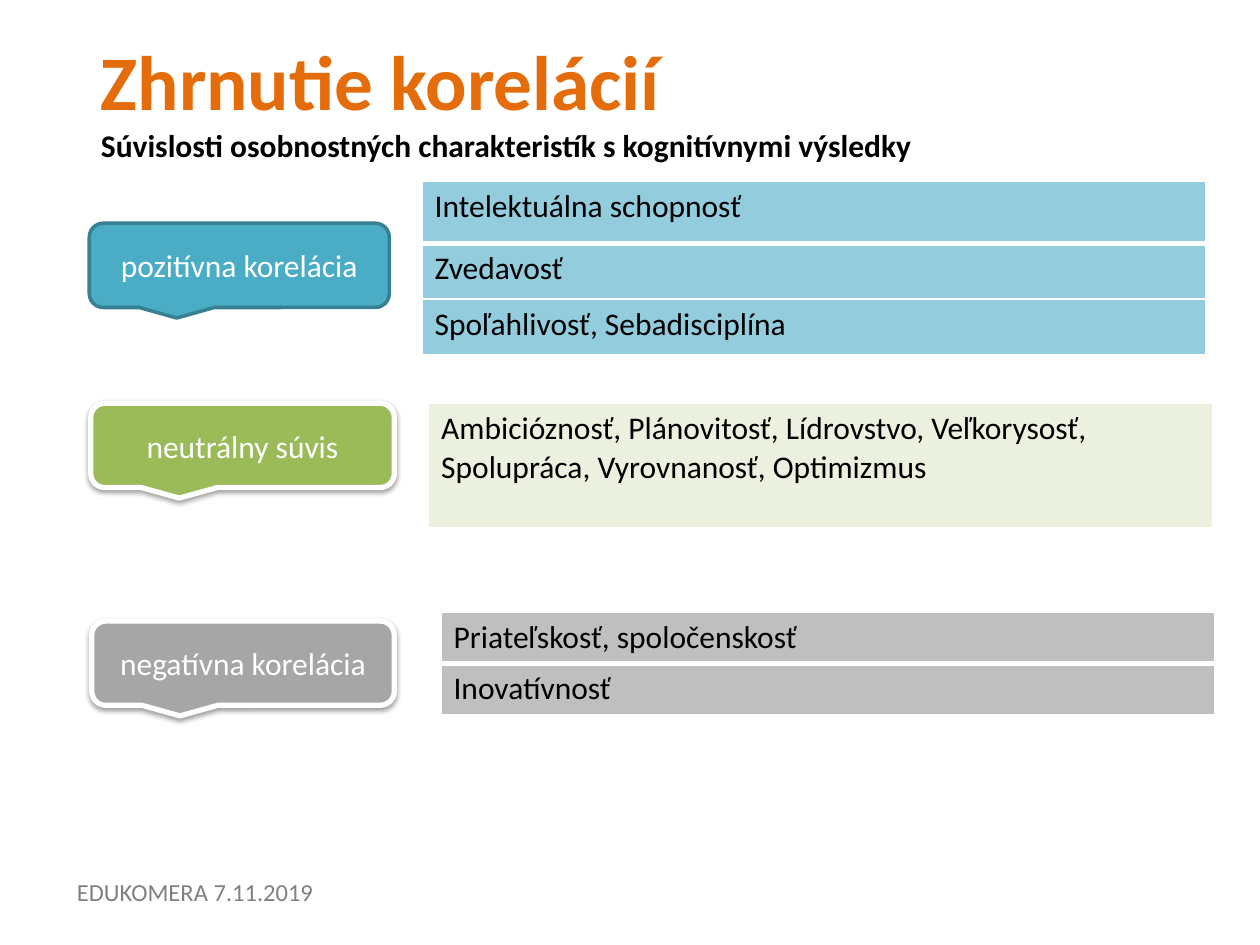
import pptx
import pptx.dml.color
import pptx.enum.shapes
import pptx.enum.text
import pptx.oxml
import pptx.oxml.ns
import pptx.util
from pptx.util import Cm

FONT = "Calibri"
ALIGN = pptx.enum.text.PP_ALIGN
ANCHOR = pptx.enum.text.MSO_ANCHOR
NAMESPACE = pptx.oxml.ns.nsdecls("a")


def rgb(color):
    """Turn a hex string into a colour."""
    return pptx.dml.color.RGBColor.from_string(color)


def add_run(paragraph, text, size=18, color="000000", bold=False):
    """Append one formatted run to a paragraph."""
    run = paragraph.add_run()
    run.text = text
    run.font.name = FONT
    run.font.size = pptx.util.Pt(size)
    run.font.bold = bold
    run.font.color.rgb = rgb(color)


def fill_title(slide):
    """Place the title and its subtitle line."""
    title = slide.shapes.title
    title.left, title.top, title.width, title.height = Cm(1.78), Cm(0.91), Cm(22.73), Cm(2.16)
    frame = title.text_frame
    frame.auto_size = pptx.enum.text.MSO_AUTO_SIZE.NONE
    frame.word_wrap = True
    frame.vertical_anchor = ANCHOR.MIDDLE
    paragraph = frame.paragraphs[0]
    paragraph.alignment = ALIGN.LEFT
    add_run(paragraph, "Zhrnutie korelácií", 44.1, "E46C0A", True)
    paragraph.add_line_break()
    add_run(paragraph, "Súvislosti osobnostných charakteristík s kognitívnymi výsledky", bold=True)


def add_shadow(shape):
    """Give a shape a soft shadow straight below it."""
    effects = shape._element.spPr.find(pptx.oxml.ns.qn("a:effectLst"))
    effects.append(pptx.oxml.parse_xml(
        f'<a:outerShdw {NAMESPACE} blurRad="40000" dist="20000" dir="5400000" rotWithShape="0">'
        '<a:srgbClr val="000000"><a:alpha val="38000"/></a:srgbClr></a:outerShdw>'))


def add_callout(slide, text, left, top, width, fill, line="FFFFFF", line_width=3, shadow=True):
    """Add a rounded callout that labels one group."""
    shape = slide.shapes.add_shape(
        pptx.enum.shapes.MSO_SHAPE.ROUNDED_RECTANGULAR_CALLOUT,
        Cm(left), Cm(top), Cm(width), Cm(1.7))
    shape.shadow.inherit = False
    shape.fill.solid()
    shape.fill.fore_color.rgb = rgb(fill)
    shape.line.color.rgb = rgb(line)
    shape.line.width = pptx.util.Pt(line_width)
    if shadow:
        add_shadow(shape)
    frame = shape.text_frame
    frame.word_wrap = True
    frame.vertical_anchor = ANCHOR.MIDDLE
    frame.paragraphs[0].alignment = ALIGN.CENTER
    add_run(frame.paragraphs[0], text, color="FFFFFF")


def set_borders(cell, top, bottom):
    """Draw white borders around a cell, widths in points."""
    properties = cell._tc.get_or_add_tcPr()
    sides = {"L": 1, "R": 1, "T": top, "B": bottom}
    for index, (side, width) in enumerate(sides.items()):
        properties.insert(index, pptx.oxml.parse_xml(
            f'<a:ln{side} {NAMESPACE} w="{pptx.util.Pt(width)}"><a:solidFill>'
            f'<a:srgbClr val="FFFFFF"/></a:solidFill></a:ln{side}>'))


def add_trait_table(slide, left, top, width, fill, rows):
    """Add a one-column table from pairs of text and row height."""
    height = sum(row_height for _, row_height in rows)
    table = slide.shapes.add_table(
        len(rows), 1, Cm(left), Cm(top), Cm(width), Cm(height)).table
    table.first_row = False
    table.horz_banding = False
    for index, (text, row_height) in enumerate(rows):
        table.rows[index].height = Cm(row_height)
        cell = table.cell(index, 0)
        cell.fill.solid()
        cell.fill.fore_color.rgb = rgb(fill)
        set_borders(cell, 3 if index == 1 else 1, 3 if index == 0 else 1)
        add_run(cell.text_frame.paragraphs[0], text)


def add_footer(slide, text):
    """Add the grey line at the foot of the slide."""
    box = slide.shapes.add_textbox(Cm(1.3), Cm(17.55), Cm(7.34), Cm(0.86))
    box.text_frame.word_wrap = True
    add_run(box.text_frame.paragraphs[0], text, 14, "808080")


def main():
    """Build the slide and save it."""
    presentation = pptx.Presentation()
    presentation.slide_width, presentation.slide_height = Cm(25.4), Cm(19.05)
    slide = presentation.slides.add_slide(presentation.slide_layouts[5])
    fill_title(slide)
    add_callout(slide, "pozitívna korelácia", 1.8, 4.5, 6.05, "4BACC6", "377F92", 2, False)
    add_callout(slide, "neutrálny súvis", 1.83, 8.13, 6.12, "9BBB59")
    add_callout(slide, "negatívna korelácia", 1.85, 12.52, 6.1, "A6A6A6")
    add_trait_table(slide, 8.51, 3.66, 15.8, "93CDDD", [
        ("Intelektuálna schopnosť", 1.25),
        ("Zvedavosť", 1.12),
        ("Spoľahlivosť, Sebadisciplína", 1.12)])
    add_trait_table(slide, 8.89, 12.34, 15.6, "BFBFBF", [
        ("Priateľskosť, spoločenskosť", 1.03),
        ("Inovatívnosť", 1.03)])
    add_footer(slide, "EDUKOMERA 7.11.2019")
    add_trait_table(slide, 8.64, 8.13, 15.8, "EBF1DE", [
        ("Ambicióznosť, Plánovitosť, Lídrovstvo, Veľkorysosť, "
         "Spolupráca, Vyrovnanosť, Optimizmus", 2.54)])
    presentation.save("out.pptx")


if __name__ == "__main__":
    main()
